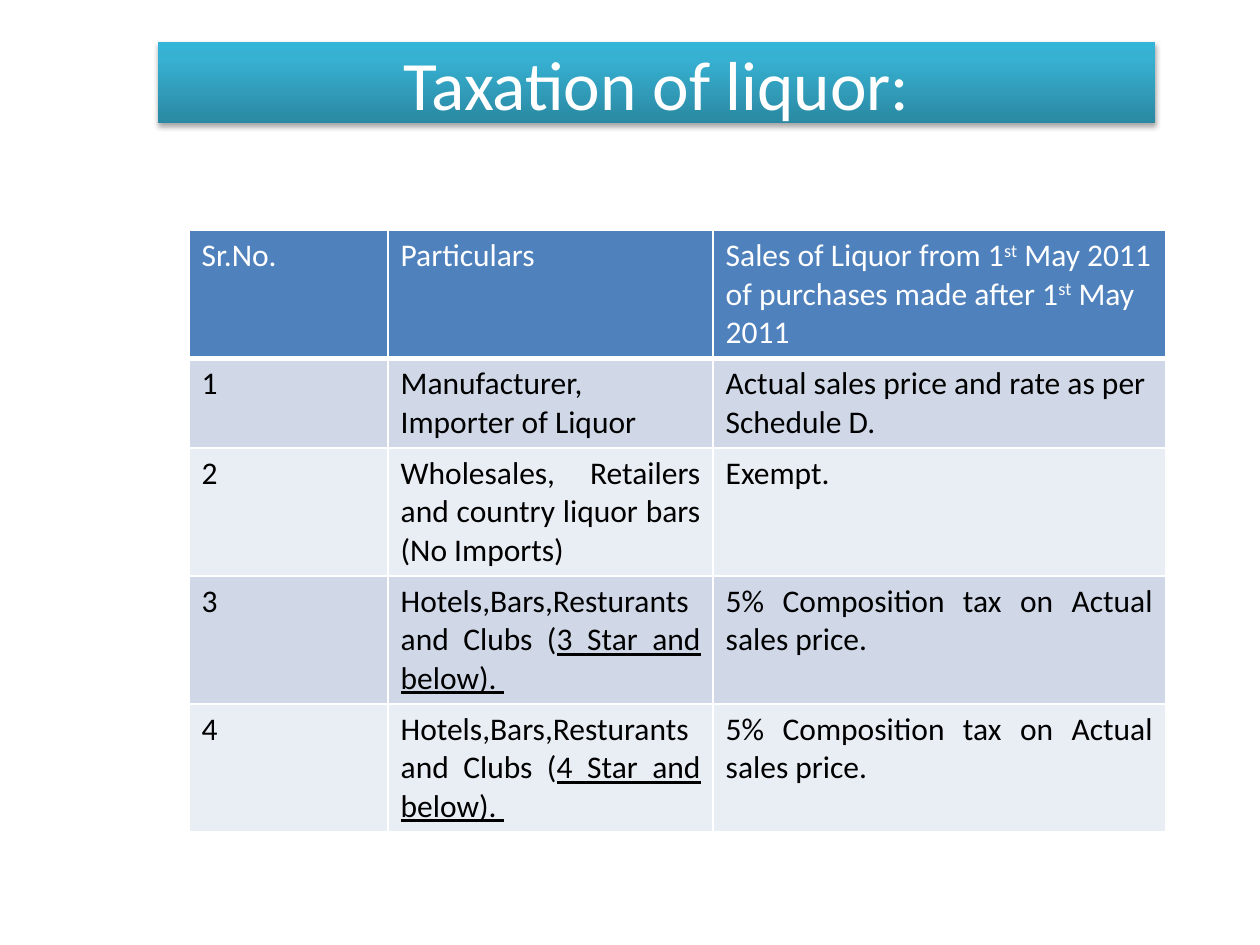
from lxml import etree
from pptx import Presentation, util as u
from pptx.dml.color import RGBColor
from pptx.enum import text
from pptx.oxml import ns, parse_xml

WHITE = RGBColor(0xFF, 0xFF, 0xFF)
BLACK = RGBColor(0x00, 0x00, 0x00)
HEADER_BLUE = RGBColor(0x4F, 0x81, 0xBD)
BANDS = [RGBColor(0xE9, 0xED, 0xF4), RGBColor(0xD0, 0xD8, 0xE8)]
TEAL_STOPS = [(0, RGBColor(0x2A, 0x88, 0xA2)),
              (80, RGBColor(0x37, 0xB1, 0xD2)),
              (100, RGBColor(0x34, 0xB4, 0xD6))]
FONT = "Calibri"

HEADING = "Taxation of liquor:"
PLAIN, SUPER, UNDER = "plain", "super", "under"
COMPOSITION = [("5% Composition tax on Actual sales price.", PLAIN)]
HOTELS = ("Hotels,Bars,Resturants and Clubs (", PLAIN)
ROWS = [
    [[("Sr.No.", PLAIN)],
     [("Particulars", PLAIN)],
     [("Sales of Liquor from 1", PLAIN), ("st", SUPER),
      (" May 2011 of purchases made after 1", PLAIN), ("st", SUPER),
      (" May 2011", PLAIN)]],
    [[("1", PLAIN)],
     [("Manufacturer, Importer of Liquor", PLAIN)],
     [("Actual sales price and rate as per Schedule D.", PLAIN)]],
    [[("2", PLAIN)],
     [("Wholesales, Retailers and country liquor bars (No Imports)", PLAIN)],
     [("Exempt.", PLAIN)]],
    [[("3", PLAIN)], [HOTELS, ("3 Star and below). ", UNDER)], COMPOSITION],
    [[("4", PLAIN)], [HOTELS, ("4 Star and below). ", UNDER)], COMPOSITION],
]
COLUMN_WIDTHS = [1.58, 2.58, 3.59]
ROW_HEIGHTS = [1.01, 0.7, 1.01, 1.01, 1.01]
FIRST_JUSTIFIED_ROW = 2


def add_run(paragraph, words, size, color):
    run = paragraph.add_run()
    run.text = words
    run.font.name = FONT
    run.font.size = u.Pt(size)
    run.font.bold = False
    run.font.color.rgb = color
    return run


def decorate_heading(heading):
    stops = "".join(f'<a:gs pos="{place * 1000}"><a:srgbClr val="{color}"/></a:gs>'
                    for place, color in TEAL_STOPS)
    properties = heading._element.spPr
    properties.append(parse_xml(
        f'<a:gradFill {ns.nsdecls("a")} rotWithShape="1"><a:gsLst>{stops}</a:gsLst>'
        '<a:lin ang="16200000" scaled="0"/></a:gradFill>'))
    heading.line.fill.background()
    properties.append(parse_xml(
        f'<a:effectLst {ns.nsdecls("a")}><a:outerShdw blurRad="{u.Pt(3.1)}" '
        f'dist="{u.Pt(1.8)}" dir="5400000" rotWithShape="0"><a:srgbClr val="000000">'
        '<a:alpha val="35000"/></a:srgbClr></a:outerShdw></a:effectLst>'))


def add_borders(cell, bottom):
    properties = cell._tc.get_or_add_tcPr()
    for place, (side, width) in enumerate(
            [("lnL", 1), ("lnR", 1), ("lnT", 1), ("lnB", bottom)]):
        border = etree.Element(ns.qn(f"a:{side}"), w=str(u.Pt(width)))
        paint = etree.SubElement(border, ns.qn("a:solidFill"))
        etree.SubElement(paint, ns.qn("a:srgbClr"), val=str(WHITE))
        properties.insert(place, border)


def fill_cell(cell, pieces, row, column):
    header = row == 0
    cell.fill.solid()
    cell.fill.fore_color.rgb = HEADER_BLUE if header else BANDS[row % 2]
    add_borders(cell, 3 if header else 1)
    paragraph = cell.text_frame.paragraphs[0]
    justified = row >= FIRST_JUSTIFIED_ROW and column > 0
    paragraph.alignment = text.PP_ALIGN.JUSTIFY if justified else text.PP_ALIGN.LEFT
    for words, style in pieces:
        run = add_run(paragraph, words, 18, WHITE if header else BLACK)
        if style == SUPER:
            run._r.get_or_add_rPr().set("baseline", "30000")
        elif style == UNDER:
            run.font.underline = True


def main():
    deck = Presentation()
    deck.slide_width, deck.slide_height = u.Inches(10), u.Inches(7.5)
    slide = deck.slides.add_slide(deck.slide_layouts[5])

    heading = slide.shapes.title
    heading.left, heading.top = u.Inches(1.25), u.Inches(0.33)
    heading.width, heading.height = u.Inches(7.92), u.Inches(0.65)
    decorate_heading(heading)
    frame = heading.text_frame
    frame.auto_size = text.MSO_AUTO_SIZE.NONE
    frame.vertical_anchor = text.MSO_ANCHOR.MIDDLE
    frame.paragraphs[0].alignment = text.PP_ALIGN.CENTER
    add_run(frame.paragraphs[0], HEADING, 39.6, WHITE)

    taxes = slide.shapes.add_table(
        len(ROWS), len(COLUMN_WIDTHS), u.Inches(1.5), u.Inches(1.83),
        u.Inches(sum(COLUMN_WIDTHS)), u.Inches(sum(ROW_HEIGHTS))).table
    for column, width in zip(taxes.columns, COLUMN_WIDTHS):
        column.width = u.Inches(width)
    for line, height in zip(taxes.rows, ROW_HEIGHTS):
        line.height = u.Inches(height)
    for row, entries in enumerate(ROWS):
        for column, pieces in enumerate(entries):
            fill_cell(taxes.cell(row, column), pieces, row, column)

    deck.save("out.pptx")


if __name__ == "__main__":
    main()
